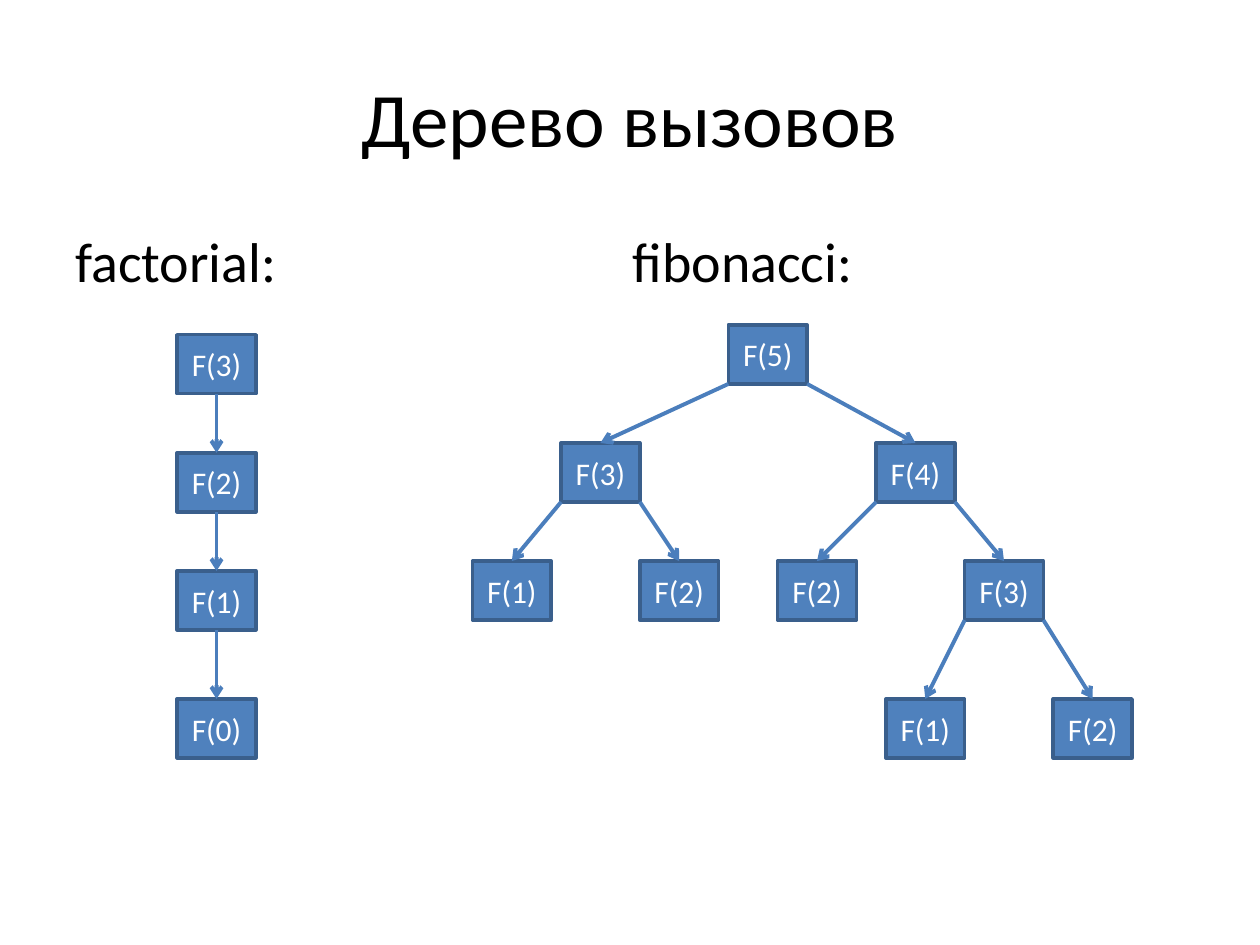
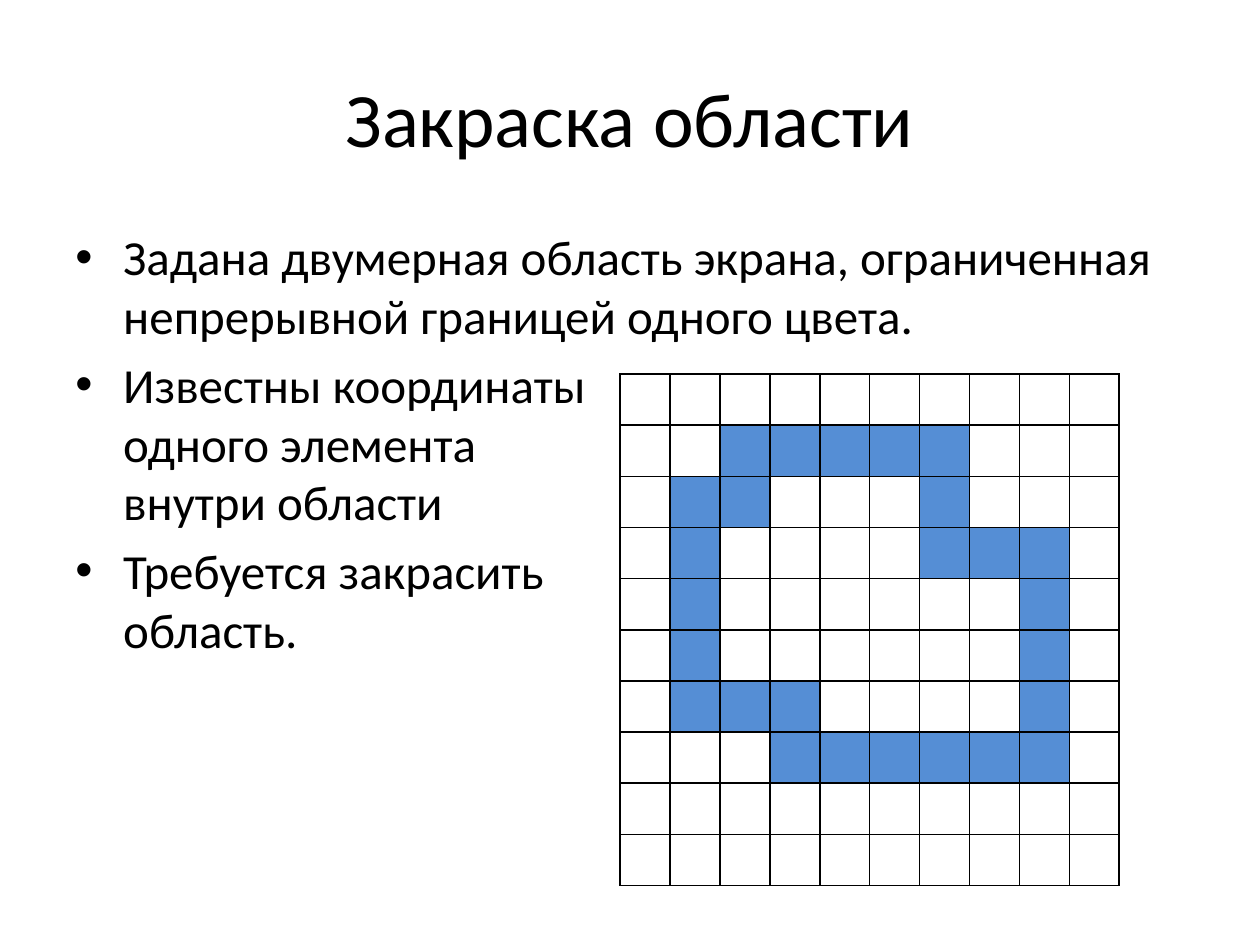
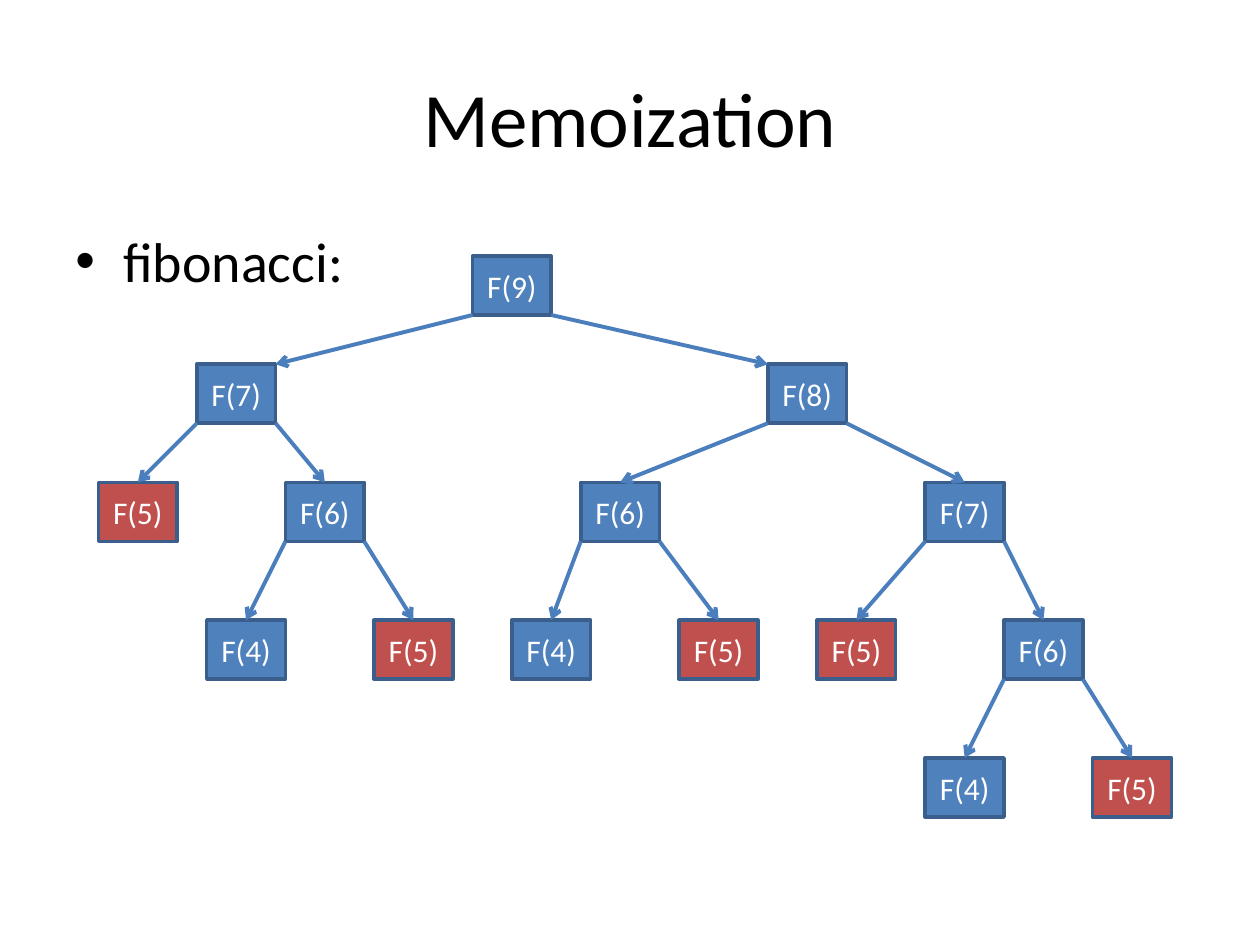
"""Build three slides on recursion: call trees, area filling and memoization."""
from lxml import etree
from pptx import Presentation
from pptx.dml.color import RGBColor
from pptx.enum.shapes import MSO_CONNECTOR, MSO_SHAPE
from pptx.enum.text import MSO_ANCHOR, PP_ALIGN
from pptx.oxml.ns import qn
from pptx.util import Inches, Pt

RECTANGLE = MSO_SHAPE.RECTANGLE
STRAIGHT = MSO_CONNECTOR.STRAIGHT
MIDDLE = MSO_ANCHOR.MIDDLE
TOP = MSO_ANCHOR.TOP
CENTER = PP_ALIGN.CENTER

BLACK = RGBColor(0x00, 0x00, 0x00)
WHITE = RGBColor(0xFF, 0xFF, 0xFF)
CALL_BLUE = RGBColor(0x4F, 0x81, 0xBD)
REPEAT_RED = RGBColor(0xC0, 0x50, 0x4D)
OUTLINE = RGBColor(0x3A, 0x5F, 0x8C)
ARROW_BLUE = RGBColor(0x4B, 0x7E, 0xBC)
BORDER_BLUE = RGBColor(0x55, 0x8E, 0xD5)

FONT = "Calibri"
SLIDE_WIDTH, SLIDE_HEIGHT = Inches(10), Inches(7.5)
COLUMNS = 128
BOX_COLUMNS, BOX_ROWS = 8, 6
WIDE_GAP = 24
TITLE_AREA = (6.4, 3.84, 115.2, 16)
BODY_AREA = (6.4, 22.4, 115.2, 63.36)
RIGHT_LABEL_AREA = (63, 22.4, 58, 63.36)
TABLE_AREA = (63, 38, 50.7, 52)
TOP_SIDE, BOTTOM_SIDE = 0, 2

FACTORIAL_ROWS = (34, 46, 58, 71)
FACTORIAL_TREE = (3, 18, (2, 18, (1, 18, (0, 18))))
FIBONACCI_ROWS = (33, 45, 57, 71)
FIBONACCI_TREE = (
    5, 74,
    (3, 57, (1, 48), (2, 65)),
    (4, 89, (2, 79), (3, 98, (1, 90), (2, 107))),
)
MEMO_ROWS = (26, 37, 49, 63, 77)
MEMO_TREE = (
    9, 48,
    (7, 20, (5, 10), (6, 29, (4, 21), (5, 38))),
    (8, 78,
     (6, 59, (4, 52), (5, 69)),
     (7, 94, (5, 83), (6, 102, (4, 94), (5, 111)))),
)
AREA_MAP = (
    "..........",
    "..#####...",
    ".##...#...",
    ".#....###.",
    ".#......#.",
    ".#......#.",
    ".###....#.",
    "...######.",
    "..........",
    "..........",
)


def grid(*steps):
    """Turn grid steps into lengths."""
    return [int(SLIDE_WIDTH * step / COLUMNS) for step in steps]


class Deck:
    """Holds the shared style and the current slide."""

    def __init__(self):
        """Start an empty presentation."""
        self.presentation = Presentation()
        self.presentation.slide_width = SLIDE_WIDTH
        self.presentation.slide_height = SLIDE_HEIGHT
        self.slide = None

    def add_text(self, paragraph, text, size, color):
        """Add the lines of a text to a paragraph as runs."""
        for number, line in enumerate(text.split("\n")):
            if number:
                paragraph.add_line_break()
            run = paragraph.add_run()
            run.text = line
            run.font.name = FONT
            run.font.size = Pt(size)
            run.font.color.rgb = color

    def add_slide(self, title):
        """Add a slide with a centred title."""
        layout = self.presentation.slide_layouts.get_by_name("Title Only")
        self.slide = self.presentation.slides.add_slide(layout)
        self.slide.background.fill.solid()
        self.slide.background.fill.fore_color.rgb = WHITE
        shape = self.slide.shapes.title
        shape.left, shape.top, shape.width, shape.height = grid(*TITLE_AREA)
        shape.text_frame.vertical_anchor = MIDDLE
        paragraph = shape.text_frame.paragraphs[0]
        paragraph.alignment = CENTER
        self.add_text(paragraph, title, 44, BLACK)

    def add_body(self, texts, size=32, area=BODY_AREA, bullet="•"):
        """Add body paragraphs, with bullets unless none is given."""
        frame = self.slide.shapes.add_textbox(*grid(*area)).text_frame
        frame.word_wrap = True
        frame.vertical_anchor = TOP
        for number, text in enumerate(texts):
            paragraph = frame.add_paragraph() if number else frame.paragraphs[0]
            paragraph.space_before = Pt(size * 0.2)
            self.add_text(paragraph, text, size, BLACK)
            if bullet:
                properties = paragraph._p.get_or_add_pPr()
                properties.set("marL", str(Inches(0.38)))
                properties.set("indent", str(-Inches(0.38)))
                etree.SubElement(properties, qn("a:buFont"), typeface="Arial")
                etree.SubElement(properties, qn("a:buChar"), char=bullet)

    def add_call(self, number, column, row, color):
        """Add the box of one call."""
        area = grid(column, row, BOX_COLUMNS, BOX_ROWS)
        shape = self.slide.shapes.add_shape(RECTANGLE, *area)
        shape.shadow.inherit = False
        shape.fill.solid()
        shape.fill.fore_color.rgb = color
        shape.line.color.rgb = OUTLINE
        shape.line.width = Pt(2)
        frame = shape.text_frame
        frame.word_wrap = True
        frame.margin_left = frame.margin_right = 0
        frame.vertical_anchor = MIDDLE
        paragraph = frame.paragraphs[0]
        paragraph.alignment = CENTER
        self.add_text(paragraph, f"F({number})", 18, WHITE)
        return shape

    def add_arrow(self, parent, child, share):
        """Add an arrow from a share of the parent's bottom side to the child."""
        start_x = int(parent.left + parent.width * share)
        near_corner = child.left + int(child.width * (1 - share))
        connector = self.slide.shapes.add_connector(
            STRAIGHT, start_x, parent.top + parent.height, near_corner, child.top)
        if share == 0.5:
            connector.begin_connect(parent, BOTTOM_SIDE)
        if abs(child.left - parent.left) < grid(WIDE_GAP)[0]:
            connector.end_connect(child, TOP_SIDE)
        connector.line.color.rgb = ARROW_BLUE
        connector.line.width = Pt(2.25)
        properties = connector._element.spPr
        etree.SubElement(properties.find(qn("a:ln")), qn("a:tailEnd"), type="arrow")
        etree.SubElement(properties, qn("a:effectLst"))

    def add_tree(self, tree, rows, repeated=None):
        """Add a call tree and return the box of its root."""
        number, column, *children = tree
        color = REPEAT_RED if number == repeated else CALL_BLUE
        parent = self.add_call(number, column, rows[0], color)
        shares = (0.5,) if len(children) == 1 else (0, 1)
        for share, branch in zip(shares, children):
            child = self.add_tree(branch, rows[1:], repeated)
            self.add_arrow(parent, child, share)
        return parent

    def add_area(self, area_map):
        """Add a ruled table whose marked cells are coloured."""
        table = self.slide.shapes.add_table(
            len(area_map), len(area_map[0]), *grid(*TABLE_AREA)).table
        table.first_row = table.horz_banding = False
        for row, marks in enumerate(area_map):
            for column, mark in enumerate(marks):
                cell = table.cell(row, column)
                self.rule_cell(cell)
                cell.fill.solid()
                cell.fill.fore_color.rgb = BORDER_BLUE if mark == "#" else WHITE

    def rule_cell(self, cell):
        """Draw a thin black line on each side of a cell."""
        properties = cell._tc.get_or_add_tcPr()
        for side in ("a:lnL", "a:lnR", "a:lnT", "a:lnB"):
            line = etree.SubElement(properties, qn(side), w=str(Pt(1)))
            fill = etree.SubElement(line, qn("a:solidFill"))
            etree.SubElement(fill, qn("a:srgbClr"), val=str(BLACK))


def main():
    """Build and save the slides."""
    deck = Deck()

    deck.add_slide("Дерево вызовов")
    deck.add_body(["factorial:"], bullet=None)
    deck.add_body(["fibonacci:"], area=RIGHT_LABEL_AREA, bullet=None)
    deck.add_tree(FACTORIAL_TREE, FACTORIAL_ROWS)
    deck.add_tree(FIBONACCI_TREE, FIBONACCI_ROWS)

    deck.add_slide("Закраска области")
    deck.add_body([
        "Задана двумерная область экрана, ограниченная непрерывной границей одного цвета.",
        "Известны координаты\nодного элемента\nвнутри области",
        "Требуется закрасить\nобласть.",
    ], size=28)
    deck.add_area(AREA_MAP)

    deck.add_slide("Memoization")
    deck.add_body(["fibonacci:"])
    deck.add_tree(MEMO_TREE, MEMO_ROWS, repeated=5)

    deck.presentation.save("out.pptx")


if __name__ == "__main__":
    main()
